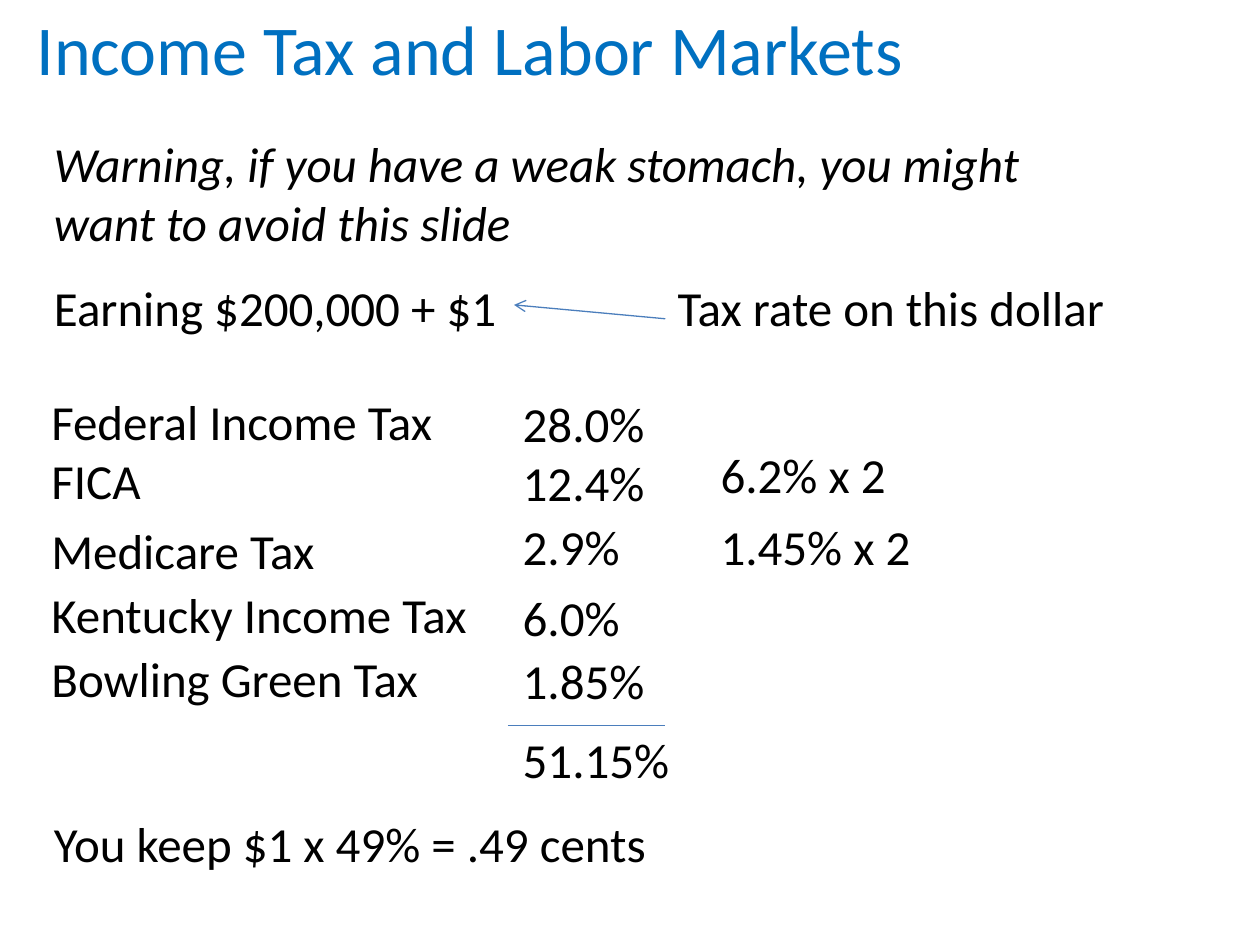
from lxml import etree
from pptx import Presentation
from pptx.dml.color import RGBColor
from pptx.enum.shapes import MSO_CONNECTOR
from pptx.enum.text import MSO_ANCHOR, PP_ALIGN
from pptx.oxml.ns import qn
from pptx.util import Inches, Pt

STRAIGHT = MSO_CONNECTOR.STRAIGHT
TOP, MIDDLE = MSO_ANCHOR.TOP, MSO_ANCHOR.MIDDLE
LEFT = PP_ALIGN.LEFT

THEME = {
    "font": "Calibri",
    "title_size": Pt(40),
    "body_size": Pt(28),
    "title": RGBColor(0x00, 0x70, 0xC0),
    "text": RGBColor(0x00, 0x00, 0x00),
    "line": RGBColor(0x4B, 0x7E, 0xBC),
    "line_width": Pt(0.75),
}

TITLE = "Income Tax and Labor Markets"
WARNING = "Warning, if you have a weak stomach, you might want to avoid this slide"
EARNING = "Earning $200,000 + $1"
QUESTION = "Tax rate on this dollar"
TOTAL = "51.15%"
CONCLUSION = "You keep $1 x 49% = .49 cents"

# Each entry is (text, top); the last one in a row explains the rate.
TAXES = [
    [("Federal Income Tax", 3.06), ("28.0%", 3.07)],
    [("FICA", 3.53), ("12.4%", 3.54), ("6.2% x 2", 3.48)],
    [("Medicare Tax", 4.08), ("2.9%", 4.05), ("1.45% x 2", 4.05)],
    [("Kentucky Income Tax", 4.59), ("6.0%", 4.61)],
    [("Bowling Green Tax", 5.1), ("1.85%", 5.11)],
]
COLUMNS = [(0.31, 3.53), (4.05, 1.62), (5.62, 2.61)]  # left, width
MARGIN = 0.33
ROW_HEIGHT = 0.75


def write(frame, text, size, color, anchor, italic=False):
    frame.word_wrap = True
    frame.vertical_anchor = anchor
    frame.text = text
    paragraph = frame.paragraphs[0]
    paragraph.alignment = LEFT
    font = paragraph.runs[0].font
    font.name, font.size, font.italic = THEME["font"], size, italic
    font.color.rgb = color


def add_text(slide, text, left, top, width, height=ROW_HEIGHT, italic=False):
    box = slide.shapes.add_textbox(*map(Inches, (left, top, width, height)))
    write(box.text_frame, text, THEME["body_size"], THEME["text"], TOP, italic)


def add_line(slide, start, end, arrow=False):
    connector = slide.shapes.add_connector(STRAIGHT, *map(Inches, start + end))
    connector.line.color.rgb = THEME["line"]
    connector.line.width = THEME["line_width"]
    if arrow:
        outline = connector.line._get_or_add_ln()
        etree.SubElement(outline, qn("a:tailEnd"), type="arrow")
    etree.SubElement(connector._element.spPr, qn("a:effectLst"))


def main():
    deck = Presentation()
    deck.slide_width, deck.slide_height = Inches(10), Inches(7.5)
    slide = deck.slides.add_slide(deck.slide_layouts[5])

    title = slide.shapes.title
    title.left, title.top = Inches(0.19), Inches(0)
    title.width, title.height = Inches(9.66), Inches(0.75)
    write(title.text_frame, TITLE, THEME["title_size"], THEME["title"], MIDDLE)

    add_text(slide, WARNING, MARGIN, 1.01, 8.6, 1.2, italic=True)
    add_text(slide, EARNING, MARGIN, 2.15, 4.15)
    add_text(slide, QUESTION, 5.28, 2.15, 4.72)
    add_line(slide, (5.28, 2.53), (4.08, 2.42), arrow=True)

    for row in TAXES:
        for (text, top), (left, width) in zip(row, COLUMNS):
            add_text(slide, text, left, top, width)

    rate_left, rate_width = COLUMNS[1]
    add_line(slide, (4.03, 5.76), (5.28, 5.76))
    add_text(slide, TOTAL, rate_left, 5.74, rate_width)
    add_text(slide, CONCLUSION, MARGIN, 6.41, 5.29)

    deck.save("out.pptx")


if __name__ == "__main__":
    main()
